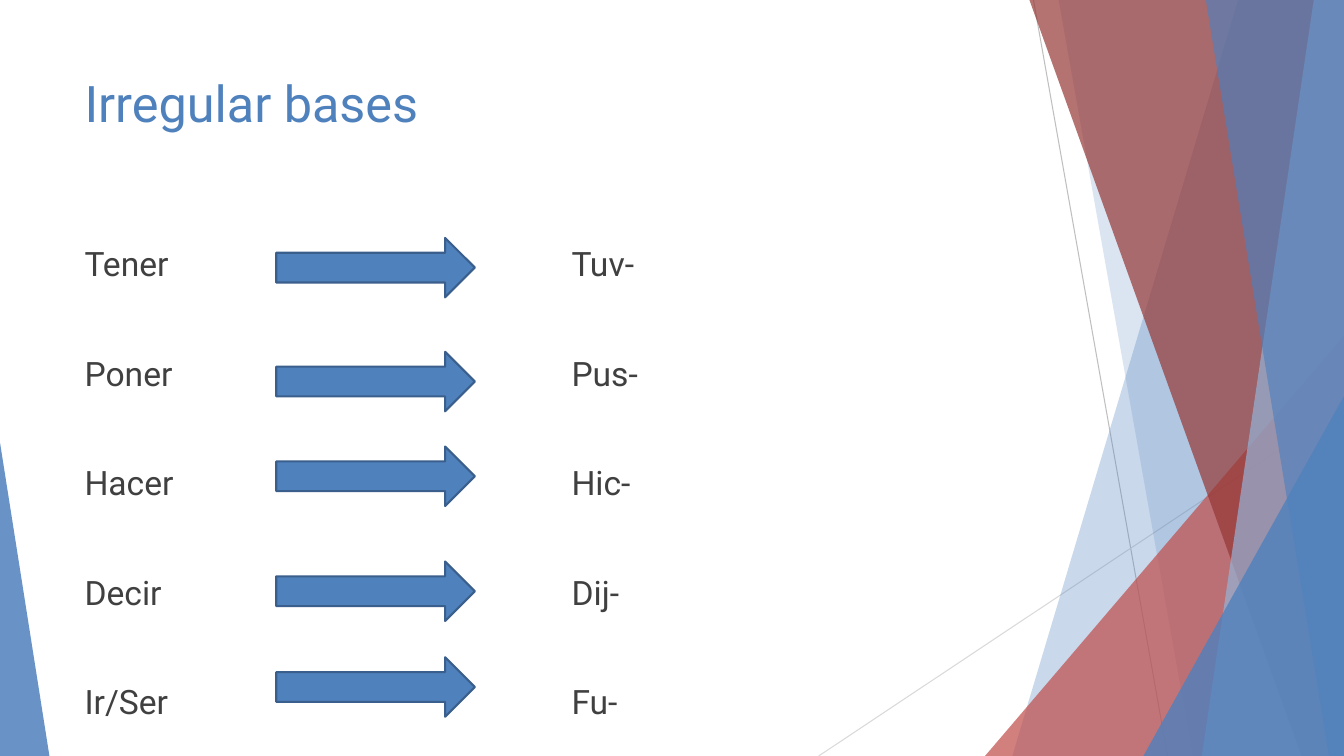
from lxml import etree
from pptx import Presentation
from pptx.dml.color import RGBColor
from pptx.enum.shapes import MSO_CONNECTOR, MSO_SHAPE
from pptx.enum.text import MSO_ANCHOR
from pptx.oxml.ns import qn
from pptx.util import Inches, Pt

W, H = 13.33, 7.5
BLUE, RED, DARK_RED, PALE_BLUE = "4F81BD", "C0504D", "953735", "95B3D7"
TEXT, ARROW_LINE = "404040", "3A5F8C"
FONT = "Roboto"

TITLE = "Irregular bases"
VERBS = [("Tener", "Tuv-"), ("Poner", "Pus-"), ("Hacer", "Hic-"),
         ("Decir", "Dij-"), ("Ir/Ser", "Fu-")]
ARROW_TOPS = [2.36, 3.49, 4.43, 5.57, 6.52]
COLUMN_LEFTS = [0.74, 5.57]

# start, end, colour
HAIRLINES = [((10.25, 0), (11.58, H), "BFBFBF"),
             ((W, 4.03), (8.12, H), "D9D9D9")]
# band: x at top, x at bottom; peak: left, top, width, apex position
DECOR = [("band", (12.28, 10.04), BLUE, 30),
         ("band", (10.5, 11.83), BLUE, 20),
         ("peak", (9.77, 3.33, 3.56, 1), RED, 72),
         ("band", (10.21, 12.91), DARK_RED, 70),
         ("band", (13.03, 11.92), PALE_BLUE, 70),
         ("band", (11.96, 13.18), BLUE, 65),
         ("peak", (11.34, 3.93, 1.99, 1), BLUE, 80),
         ("peak", (0, 4.39, 0.49, 0), BLUE, 85)]


def rgb(color):
    return RGBColor.from_string(color)


def paint(shape, color, opacity=100):
    shape.shadow.inherit = False
    shape.fill.solid()
    shape.fill.fore_color.rgb = rgb(color)
    shape.line.fill.background()
    if opacity < 100:
        clr = shape.fill._xPr.find(qn("a:solidFill"))[0]
        etree.SubElement(clr, qn("a:alpha")).set("val", str(opacity * 1000))


def add_hairline(s, start, end, color):
    line = s.shapes.add_connector(MSO_CONNECTOR.STRAIGHT,
                                  *map(Inches, start + end))
    line.line.color.rgb = rgb(color)
    line.line.width = Pt(0.75)
    etree.SubElement(line._element.spPr, qn("a:effectLst"))


def add_band(s, x_top, x_bottom):
    """Quadrilateral from a slanted edge to the right side of the slide."""
    points = [tuple(map(Inches, pt))
              for pt in [(x_top, 0), (W, 0), (W, H), (x_bottom, H)]]
    builder = s.shapes.build_freeform(*points[0], scale=1.0)
    builder.add_line_segments(points[1:], close=True)
    return builder.convert_to_shape()


def add_peak(s, left, top, width, apex):
    """Triangle standing on the bottom edge of the slide."""
    peak = s.shapes.add_shape(MSO_SHAPE.ISOSCELES_TRIANGLE,
                              *map(Inches, (left, top, width, H - top)))
    peak.adjustments[0] = apex
    return peak


def add_text(s, box, lines, size, color, gap=0):
    tf = s.shapes.add_textbox(*map(Inches, box)).text_frame
    tf.word_wrap = True
    tf.vertical_anchor = MSO_ANCHOR.TOP
    for i, text in enumerate(lines):
        p = tf.add_paragraph() if i else tf.paragraphs[0]
        p.space_before = Pt(gap if i else 0)
        r = p.add_run()
        r.text = text
        for key, value in {"name": FONT, "size": Pt(size)}.items():
            setattr(r.font, key, value)
        r.font.color.rgb = rgb(color)


def main():
    prs = Presentation()
    prs.slide_width, prs.slide_height = Inches(W), Inches(H)
    s = prs.slides.add_slide(prs.slide_layouts[6])

    for hairline in HAIRLINES:
        add_hairline(s, *hairline)
    makers = {"band": add_band, "peak": add_peak}
    for kind, geometry, color, opacity in DECOR:
        paint(makers[kind](s, *geometry), color, opacity)

    add_text(s, (0.74, 0.67, 9.4, 1.44), [TITLE], 36, BLUE)
    for left, words in zip(COLUMN_LEFTS, zip(*VERBS)):
        add_text(s, (left, 2.36, 4.58, 4.87), words, 24, TEXT, gap=49.5)
    for top in ARROW_TOPS:
        arrow = s.shapes.add_shape(MSO_SHAPE.RIGHT_ARROW,
                                   *map(Inches, (2.74, top, 1.97, 0.59)))
        paint(arrow, BLUE)
        arrow.line.color.rgb = rgb(ARROW_LINE)
        arrow.line.width = Pt(1.5)

    prs.save("out.pptx")


if __name__ == "__main__":
    main()
